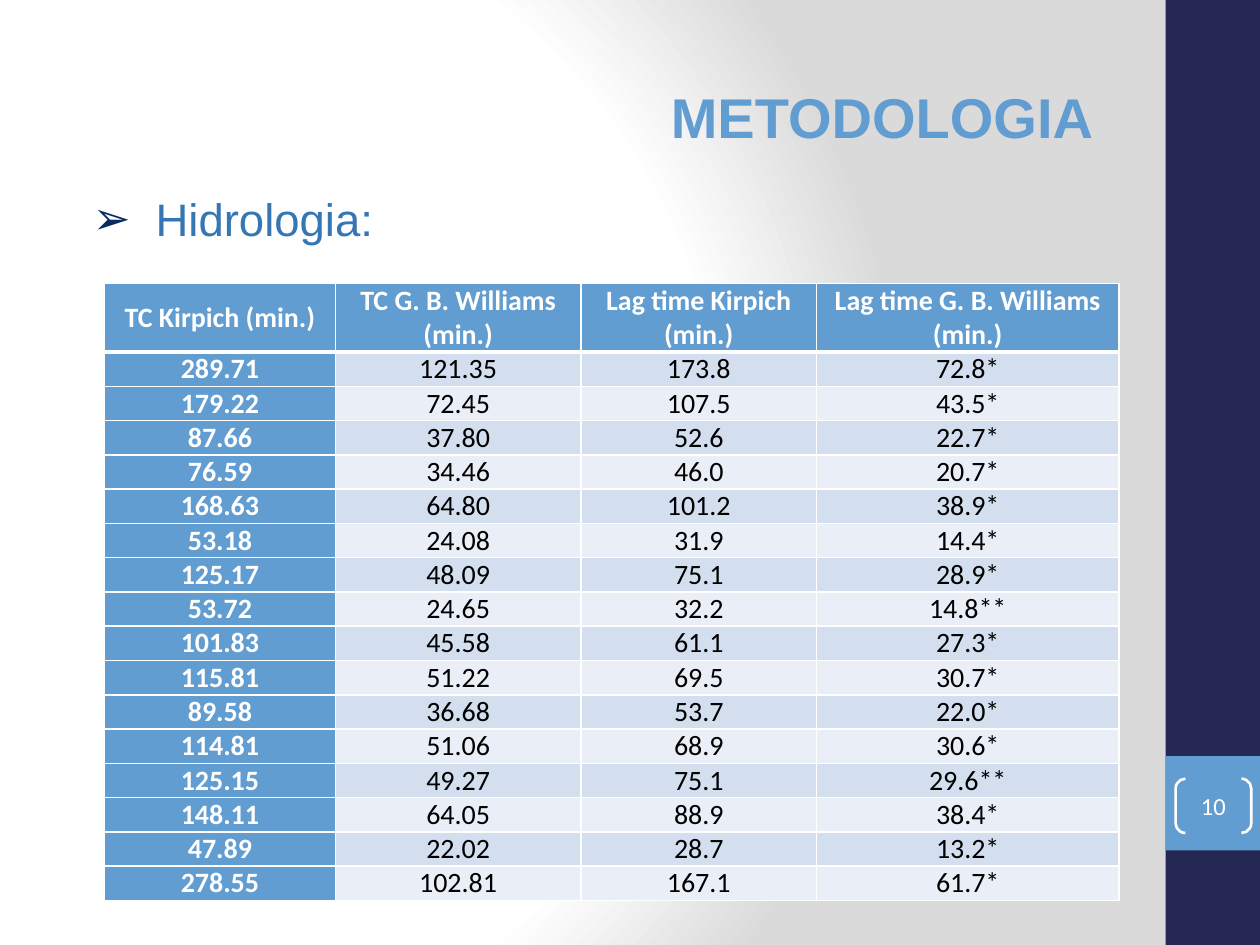
from dataclasses import dataclass

from lxml import etree
from pptx import Presentation
from pptx.dml.color import RGBColor
from pptx.enum.shapes import MSO_SHAPE
from pptx.enum.text import MSO_ANCHOR, MSO_AUTO_SIZE, PP_ALIGN
from pptx.oxml import parse_xml
from pptx.oxml.ns import nsdecls, qn
from pptx.util import Pt

RECTANGLE, BRACKETS = MSO_SHAPE.RECTANGLE, MSO_SHAPE.DOUBLE_BRACKET
MIDDLE, TOP = MSO_ANCHOR.MIDDLE, MSO_ANCHOR.TOP
CENTER, RIGHT, JUSTIFY = PP_ALIGN.CENTER, PP_ALIGN.RIGHT, PP_ALIGN.JUSTIFY
NO_AUTOFIT = MSO_AUTO_SIZE.NONE


@dataclass(frozen=True)
class Theme:
    accent: str = "629DD1"
    navy: str = "242852"
    heading: str = "3477B2"
    bullet: str = "072C62"
    white: str = "FFFFFF"
    black: str = "000000"
    shade: str = "DADADA"
    bands: tuple = ("D3DFEE", "EAEFF7")
    heading_font: str = "Arial"
    table_font: str = "Calibri"
    title_size: float = 32
    body_size: float = 26
    table_size: float = 16
    number_size: float = 14


THEME = Theme()

HEADERS = ("TC Kirpich (min.)", "TC G. B. Williams (min.)",
           "Lag time Kirpich (min.)", "Lag time G. B. Williams (min.)")
ROWS = (
    ("289.71", "121.35", "173.8", "72.8*"),
    ("179.22", "72.45", "107.5", "43.5*"),
    ("87.66", "37.80", "52.6", "22.7*"),
    ("76.59", "34.46", "46.0", "20.7*"),
    ("168.63", "64.80", "101.2", "38.9*"),
    ("53.18", "24.08", "31.9", "14.4*"),
    ("125.17", "48.09", "75.1", "28.9*"),
    ("53.72", "24.65", "32.2", "14.8**"),
    ("101.83", "45.58", "61.1", "27.3*"),
    ("115.81", "51.22", "69.5", "30.7*"),
    ("89.58", "36.68", "53.7", "22.0*"),
    ("114.81", "51.06", "68.9", "30.6*"),
    ("125.15", "49.27", "75.1", "29.6**"),
    ("148.11", "64.05", "88.9", "38.4*"),
    ("47.89", "22.02", "28.7", "13.2*"),
    ("278.55", "102.81", "167.1", "61.7*"),
)
COLUMN_WIDTHS = (131.8, 140.4, 134.6, 172.8)
ROW_HEIGHT = 19.5


def set_attributes(target, **values):
    for name, value in values.items():
        setattr(target, name, value)


def place(shape, box):
    lengths = (Pt(length) for length in box)
    set_attributes(shape, **dict(zip(("left", "top", "width", "height"), lengths)))


def write(paragraph, text, alignment, font, size, color, bold=False):
    set_attributes(paragraph, text=text, alignment=alignment)
    set_attributes(paragraph.font, name=font, size=Pt(size), bold=bold)
    paragraph.font.color.rgb = RGBColor.from_string(color)


def paint_background(slide):
    slide.background.fill.gradient()
    gradient = slide.element.find(".//" + qn("a:gradFill"))
    stops = ((0, THEME.white), (75000, THEME.white), (100000, THEME.shade))
    stop_xml = "".join(f'<a:gs pos="{position}"><a:srgbClr val="{color}"/></a:gs>'
                       for position, color in stops)
    gradient.getparent().replace(gradient, parse_xml(
        f'<a:gradFill {nsdecls("a")} rotWithShape="1"><a:gsLst>{stop_xml}</a:gsLst>'
        '<a:path path="circle"><a:fillToRect l="20000" t="50000" r="100000" b="50000"/>'
        '</a:path></a:gradFill>'))


def add_block(slide, box, color):
    block = slide.shapes.add_shape(RECTANGLE, *(Pt(length) for length in box))
    block.shadow.inherit = False
    block.fill.solid()
    block.fill.fore_color.rgb = RGBColor.from_string(color)
    block.line.fill.background()


def add_sidebar(slide, box, number):
    left, top, width, height = box
    badge_top = top + height * 0.8
    add_block(slide, box, THEME.navy)
    add_block(slide, (left, badge_top, width, width), THEME.accent)

    bracket_box = (left + 5.8, badge_top + 13, 43.2, 31)
    brackets = slide.shapes.add_shape(BRACKETS, *(Pt(length) for length in bracket_box))
    brackets.shadow.inherit = False
    brackets.adjustments[0] = 0.18
    brackets.fill.background()
    brackets.line.color.rgb = RGBColor.from_string(THEME.white)
    brackets.line.width = Pt(1.5)
    frame = brackets.text_frame
    set_attributes(frame, vertical_anchor=MIDDLE, margin_left=0, margin_top=0,
                   margin_right=0, margin_bottom=0)
    write(frame.paragraphs[0], number, CENTER, THEME.table_font,
          THEME.number_size, THEME.white)


def fill_title(slide, box, text):
    title = slide.shapes.title
    place(title, box)
    set_attributes(title.text_frame, vertical_anchor=MIDDLE, auto_size=NO_AUTOFIT)
    write(title.text_frame.paragraphs[0], text, RIGHT, THEME.heading_font,
          THEME.title_size, THEME.accent, bold=True)


def fill_body(slide, box, text):
    body = slide.placeholders[1]
    place(body, box)
    set_attributes(body.text_frame, vertical_anchor=TOP, auto_size=NO_AUTOFIT)
    paragraph = body.text_frame.paragraphs[0]
    paragraph.space_before = Pt(0)
    properties = paragraph._p.get_or_add_pPr()
    for name, length in {"marL": Pt(45), "indent": Pt(-36)}.items():
        properties.set(name, str(int(length)))
    color = etree.SubElement(properties, qn("a:buClr"))
    etree.SubElement(color, qn("a:srgbClr"), val=THEME.bullet)
    etree.SubElement(properties, qn("a:buFont"), typeface=THEME.heading_font)
    etree.SubElement(properties, qn("a:buChar"), char="➢")
    write(paragraph, text, JUSTIFY, THEME.heading_font, THEME.body_size, THEME.heading)


def add_borders(cell, **widths):
    properties = cell._tc.get_or_add_tcPr()
    for side in ("L", "R", "T", "B"):
        width = int(Pt(widths.get(side, 1)))
        line = etree.SubElement(properties, qn(f"a:ln{side}"), w=str(width))
        fill = etree.SubElement(line, qn("a:solidFill"))
        etree.SubElement(fill, qn("a:srgbClr"), val=THEME.white)


def format_cell(cell, text, row, column):
    emphasized = row == 0 or column == 0
    borders = {0: {"B": 3}, 1: {"T": 3}}.get(row, {})
    add_borders(cell, **borders)
    cell.fill.solid()
    color = THEME.accent if emphasized else THEME.bands[(row - 1) % 2]
    cell.fill.fore_color.rgb = RGBColor.from_string(color)
    set_attributes(cell, vertical_anchor=MIDDLE, margin_left=Pt(3.6),
                   margin_right=Pt(3.6), margin_top=0, margin_bottom=0)
    write(cell.text_frame.paragraphs[0], text, CENTER, THEME.table_font, THEME.table_size,
          THEME.white if emphasized else THEME.black, bold=emphasized)


def add_times_table(slide, left, top):
    records = (HEADERS, *ROWS)
    heights = [2 * ROW_HEIGHT] + [ROW_HEIGHT] * len(ROWS)
    table = slide.shapes.add_table(len(records), len(HEADERS), Pt(left), Pt(top),
                                   Pt(sum(COLUMN_WIDTHS)), Pt(sum(heights))).table
    for column, width in zip(table.columns, COLUMN_WIDTHS):
        column.width = Pt(width)
    for row_index, (record, height) in enumerate(zip(records, heights)):
        table.rows[row_index].height = Pt(height)
        for column_index, text in enumerate(record):
            format_cell(table.cell(row_index, column_index), text, row_index, column_index)


def main():
    presentation = Presentation()
    set_attributes(presentation, slide_width=Pt(720), slide_height=Pt(540))
    slide = presentation.slides.add_slide(presentation.slide_layouts[1])
    paint_background(slide)
    add_sidebar(slide, (666, 0, 54, 540), "10")
    fill_title(slide, (36, 21.6, 596, 90), "METODOLOGIA")
    fill_body(slide, (36.7, 105.8, 600, 387.4), "Hidrologia:")
    add_times_table(slide, 59.8, 162)
    presentation.save("out.pptx")


if __name__ == "__main__":
    main()
